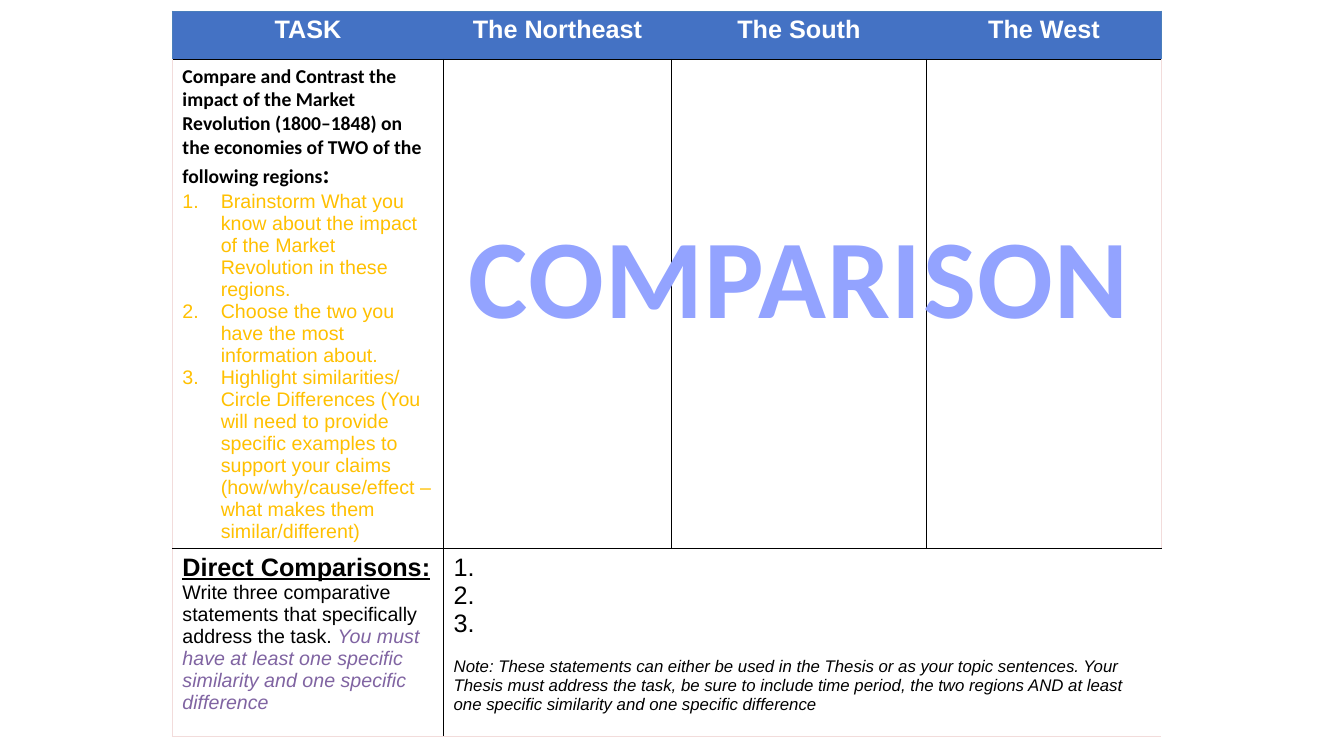
from dataclasses import dataclass

from lxml import etree
from pptx import Presentation
from pptx.dml.color import RGBColor
from pptx.enum.text import MSO_ANCHOR, PP_ALIGN
from pptx.oxml.ns import qn
from pptx.util import Inches, Pt

LEFT, CENTER = PP_ALIGN.LEFT, PP_ALIGN.CENTER
TOP = MSO_ANCHOR.TOP


@dataclass(frozen=True)
class Theme:
    header: str = "4472C4"
    header_edge: str = "4A7EBB"
    edge: str = "F2DCDB"
    ink: str = "000000"
    white: str = "FFFFFF"
    gold: str = "FFC000"
    purple: str = "8064A2"
    banner: str = "93A3FF"
    sans: str = "Arial"
    display: str = "Calibri"
    note: int = 12
    body: int = 14
    head: int = 18
    giant: int = 80


class SlideBuilder:
    def __init__(self, prs, theme):
        self.theme = theme
        self.slide = prs.slides.add_slide(prs.slide_layouts[6])

    def paragraph(self, tf, runs, align=LEFT, before=0, numbered=False):
        first = tf.paragraphs[0]
        p = tf.add_paragraph() if first.runs else first
        p.alignment = align
        if before:
            p.space_before = Pt(before)
        if numbered:
            pPr = p._p.get_or_add_pPr()
            pPr.set("marL", str(Inches(0.38)))
            pPr.set("indent", str(-Inches(0.38)))
            etree.SubElement(pPr, qn("a:buFont"), typeface="+mj-lt")
            etree.SubElement(pPr, qn("a:buAutoNum"), type="arabicPeriod")
        for text, size, color, style in runs:
            self.run(p, text, size, color, **style)

    def run(self, p, text, size, color, font=None, bold=False, italic=False,
            underline=False, spacing=0):
        r = p.add_run()
        r.text = text
        r.font.size = Pt(size)
        r.font.name = font or self.theme.sans
        r.font.bold = bold
        r.font.italic = italic
        r.font.underline = underline
        r.font.color.rgb = RGBColor.from_string(color)
        if spacing:
            r._r.get_or_add_rPr().set("spc", str(spacing * 100))

    def border(self, cell, side, color, width):
        ln = etree.SubElement(cell._tc.get_or_add_tcPr(), qn(f"a:ln{side}"),
                              w=str(Pt(width)))
        if color:
            fill = etree.SubElement(ln, qn("a:solidFill"))
            etree.SubElement(fill, qn("a:srgbClr"), val=color)
        else:
            etree.SubElement(ln, qn("a:noFill"))

    def style_cell(self, cell, row, col, last_row, last_col):
        t = self.theme
        header = row == 0
        outer = t.header_edge if header else t.edge
        inner = None if header else t.ink
        width = 0.75 if header else 1
        merged = cell.is_spanned or cell.is_merge_origin
        self.border(cell, "L", outer if col == 0 else
                    None if cell.is_spanned else inner, width)
        self.border(cell, "R", outer if col == last_col else
                    None if merged else inner, width)
        self.border(cell, "T", outer if header else t.ink, width)
        self.border(cell, "B", outer if row == last_row else t.ink, 1)
        if header:
            cell.fill.solid()
            cell.fill.fore_color.rgb = RGBColor.from_string(t.header)
        else:
            cell.fill.background()

    def table(self, left, top, widths, heights, merge):
        frame = self.slide.shapes.add_table(
            len(heights), len(widths), Inches(left), Inches(top),
            Inches(sum(widths)), Inches(sum(heights)))
        table = frame.table
        table.horz_banding = False
        for column, width in zip(table.columns, widths):
            column.width = Inches(width)
        for row, height in zip(table.rows, heights):
            row.height = Inches(height)
        start, end = merge
        table.cell(*start).merge(table.cell(*end))
        for i in range(len(heights)):
            for j in range(len(widths)):
                self.style_cell(table.cell(i, j), i, j,
                                len(heights) - 1, len(widths) - 1)
        return table

    def banner(self, text, left, top, width, height):
        t = self.theme
        sp = self.slide.shapes.add_textbox(
            Inches(left), Inches(top), Inches(width), Inches(height))
        tf = sp.text_frame
        tf.word_wrap = True
        tf.vertical_anchor = TOP
        style = dict(font=t.display, bold=True, spacing=1)
        self.paragraph(tf, [(text, t.giant, t.banner, style)], CENTER)


def main():
    prs = Presentation()
    prs.slide_width, prs.slide_height = Inches(13.33), Inches(7.5)
    t = Theme()
    s = SlideBuilder(prs, t)

    table = s.table(1.71, 0.11, [2.69, 2.26, 2.53, 2.33], [0.48, 4.84, 1.87],
                    merge=((2, 1), (2, 3)))

    headings = ["TASK", "The Northeast", "The South", "The West"]
    for col, heading in enumerate(headings):
        s.paragraph(table.cell(0, col).text_frame,
                    [(heading, t.head, t.white, dict(bold=True))], CENTER)

    task = table.cell(1, 0).text_frame
    prompt = dict(font=t.display, bold=True)
    s.paragraph(task, [
        ("Compare and Contrast the impact of the Market Revolution "
         "(1800–1848) on the economies of TWO of the following regions",
         t.body, t.ink, prompt),
        (":", t.head, t.ink, prompt),
    ])
    steps = [
        "Brainstorm What you know about the impact of the Market Revolution "
        "in these regions.",
        "Choose the two you have the most information about.",
        "Highlight similarities/ Circle Differences (You will need to provide "
        "specific examples to support your claims (how/why/cause/effect – "
        "what makes them similar/different)",
    ]
    for step in steps:
        s.paragraph(task, [(step, t.body, t.gold, {})], numbered=True)

    direct = table.cell(2, 0).text_frame
    s.paragraph(direct, [("Direct Comparisons:", t.head, t.ink,
                          dict(bold=True, underline=True))])
    s.paragraph(direct, [
        ("Write three comparative statements that specifically address the "
         "task. ", t.body, t.ink, {}),
        ("You must have at least one specific similarity and one specific "
         "difference", t.body, t.purple, dict(italic=True)),
    ])

    answers = table.cell(2, 1).text_frame
    for number in range(1, 4):
        s.paragraph(answers, [(f"{number}.", t.head, t.ink, {})])
    s.paragraph(answers, [
        ("Note: These statements can either be used in the Thesis or as your "
         "topic sentences. Your Thesis must address the task, be sure to "
         "include time period, the two regions AND at least one specific "
         "similarity and one specific difference",
         t.note, t.ink, dict(italic=True)),
    ], before=14)

    s.banner("COMPARISON", 4.33, 2, 7.19, 1.45)
    prs.save("out.pptx")


if __name__ == "__main__":
    main()
